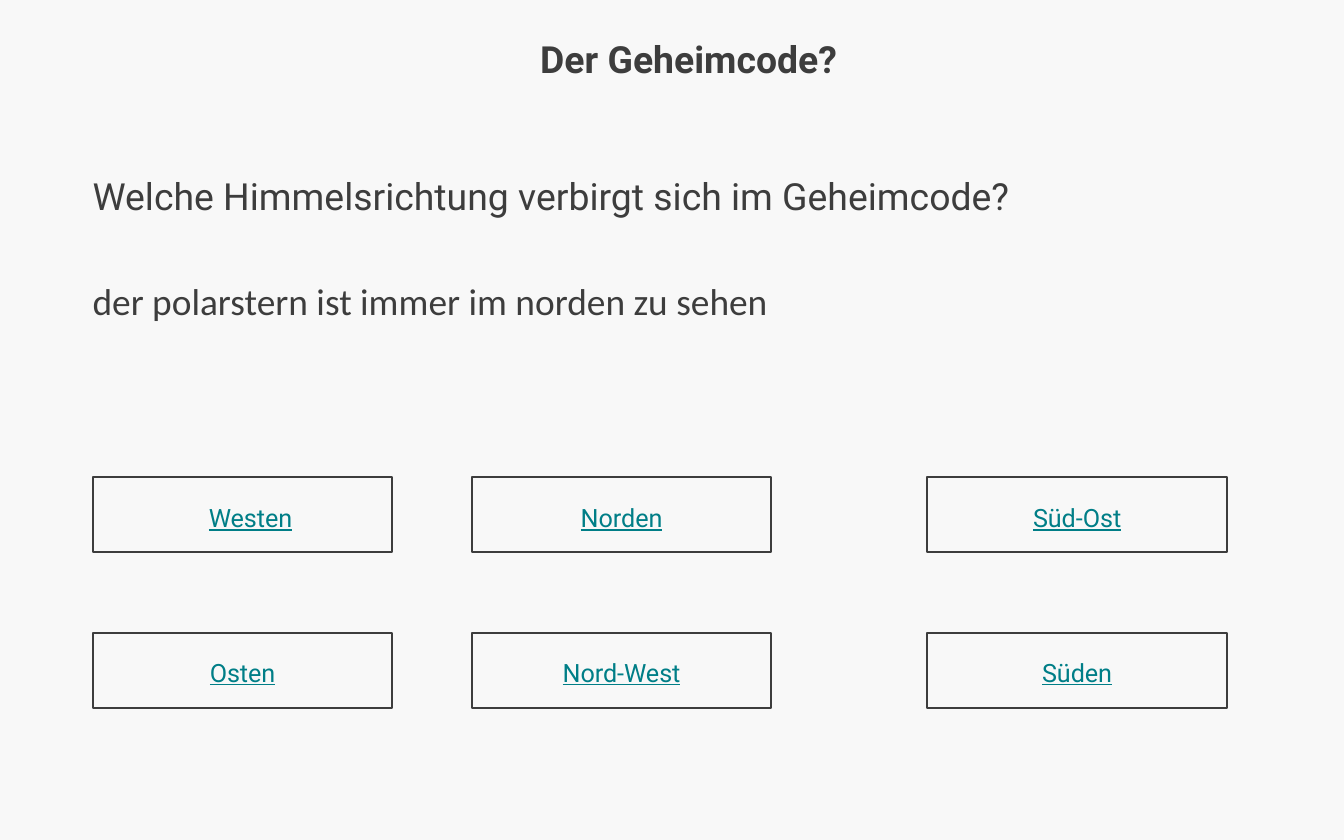
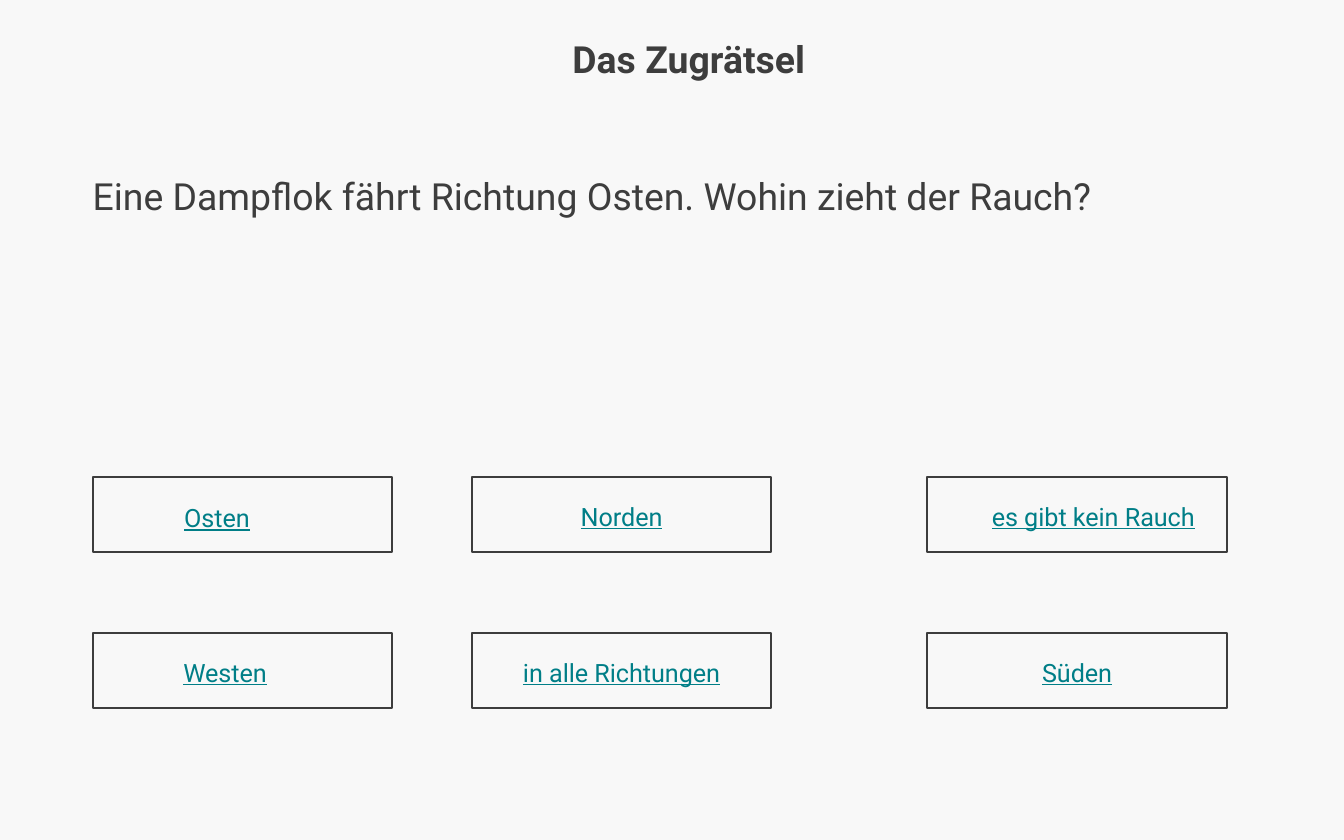
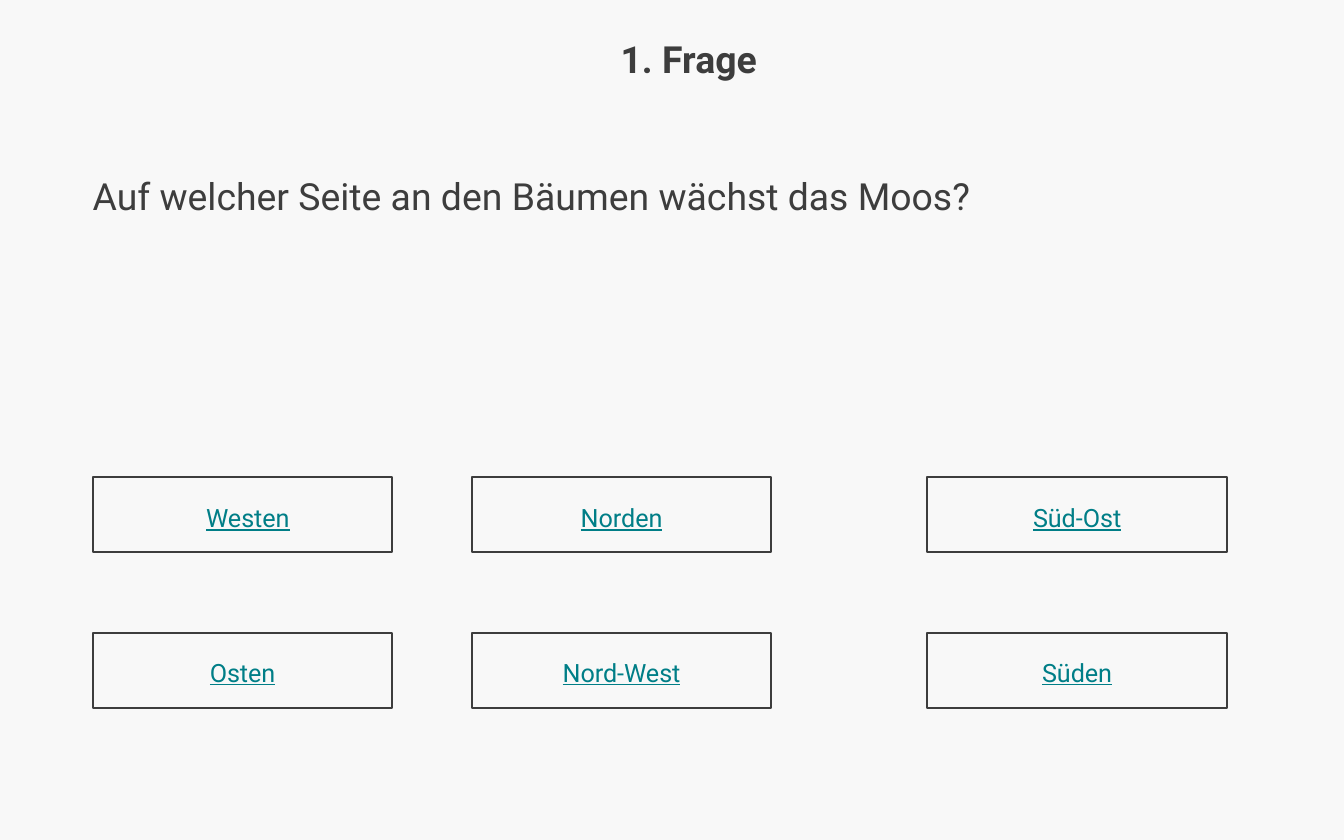
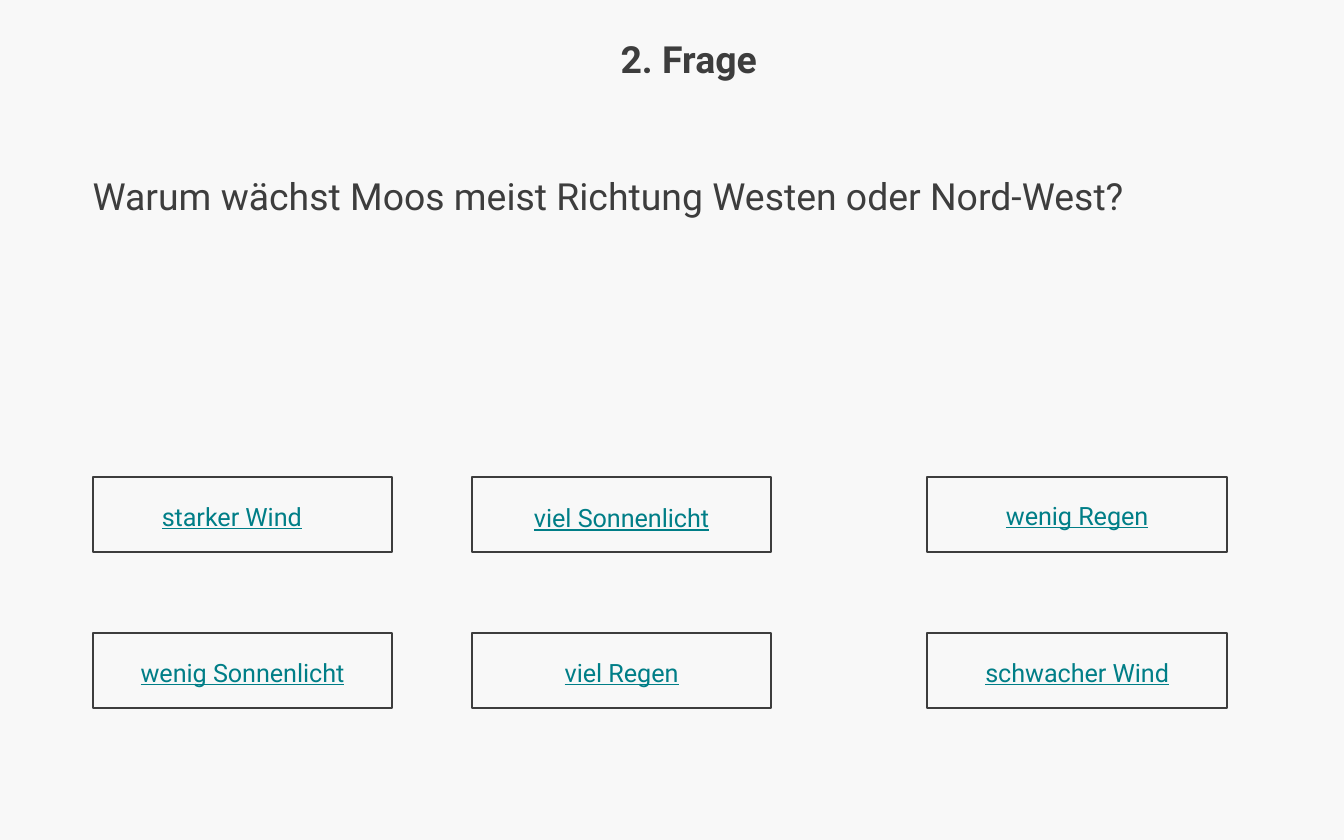
from pptx import Presentation
from pptx.dml.color import RGBColor
from pptx.enum.shapes import MSO_SHAPE
from pptx.enum.text import MSO_ANCHOR, MSO_AUTO_SIZE, PP_ALIGN
from pptx.util import Inches, Pt

COLORS = {"background": "F8F8F8", "text": "3D3D3D", "link": "007E87"}
COLUMNS = [0.69, 3.51, 6.9]
ROWS = [(3.55, 3.69), (4.71, 4.84)]  # top of the frame, top of its label
BOX_W, BOX_H = 2.23, 0.56
LABEL_W, LABEL_H = 1.77, 0.33

# Title, body lines as (text, font), answers row by row,
# and label shifts from the centre of the frame by answer.
QUESTIONS = [
    ("Der Geheimcode?",
     [("Welche Himmelsrichtung verbirgt sich im Geheimcode?", "Roboto"),
      ("der polarstern ist immer im norden zu sehen", "Calibri")],
     [["Westen", "Norden", "Süd-Ost"], ["Osten", "Nord-West", "Süden"]],
     {"Westen": (0.06, 0)}),
    ("Das Zugrätsel",
     [("Eine Dampflok fährt Richtung Osten. Wohin zieht der Rauch?", "Roboto")],
     [["Osten", "Norden", "es gibt kein Rauch"],
      ["Westen", "in alle Richtungen", "Süden"]],
     {"Osten": (-0.19, 0), "Norden": (0, -0.01),
      "es gibt kein Rauch": (0.12, -0.01), "Westen": (-0.13, 0)}),
    ("1. Frage",
     [("Auf welcher Seite an den Bäumen wächst das Moos?", "Roboto")],
     [["Westen", "Norden", "Süd-Ost"], ["Osten", "Nord-West", "Süden"]],
     {"Westen": (0.04, 0)}),
    ("2. Frage",
     [("Warum wächst Moos meist Richtung Westen oder Nord-West?", "Roboto")],
     [["starker Wind", "viel Sonnenlicht", "wenig Regen"],
      ["wenig Sonnenlicht", "viel Regen", "schwacher Wind"]],
     {"starker Wind": (-0.08, -0.01), "wenig Regen": (0, -0.02)}),
]


def add_text_frame(s, x, y, w, h):
    tf = s.shapes.add_textbox(Inches(x), Inches(y), Inches(w), Inches(h)).text_frame
    tf.word_wrap = True
    return tf


def add_run(p, text, size, color="text", font="Roboto"):
    r = p.add_run()
    r.text = text
    r.font.name = font
    r.font.size = Pt(size)
    r.font.color.rgb = RGBColor.from_string(COLORS[color])
    return r


prs = Presentation()
prs.slide_width, prs.slide_height = Inches(10), Inches(6.25)

for title, lines, answers, shifts in QUESTIONS:
    s = prs.slides.add_slide(prs.slide_layouts[6])
    s.background.fill.solid()
    s.background.fill.fore_color.rgb = RGBColor.from_string(COLORS["background"])

    tf = add_text_frame(s, 1.77, 0.05, 6.71, 0.77)
    tf.vertical_anchor = MSO_ANCHOR.MIDDLE
    p = tf.paragraphs[0]
    p.alignment = PP_ALIGN.CENTER
    add_run(p, title, 20).font.bold = True

    tf = add_text_frame(s, 0.59, 1.24, 8.82, 4.25)
    for i, (line, font) in enumerate(lines):
        p = tf.add_paragraph() if i else tf.paragraphs[0]
        if i:
            p.space_before = Pt(32)
        add_run(p, line, 20, font=font)

    for (box_top, label_top), row in zip(ROWS, answers):
        for left, answer in zip(COLUMNS, row):
            box = s.shapes.add_shape(MSO_SHAPE.RECTANGLE, Inches(left), Inches(box_top),
                                     Inches(BOX_W), Inches(BOX_H))
            box.shadow.inherit = False
            box.fill.background()
            box.line.color.rgb = RGBColor.from_string(COLORS["text"])
            box.line.width = Pt(1)

            dx, dy = shifts.get(answer, (0, 0))
            tf = add_text_frame(s, left + (BOX_W - LABEL_W) / 2 + dx, label_top + dy,
                                LABEL_W, LABEL_H)
            tf.auto_size = MSO_AUTO_SIZE.SHAPE_TO_FIT_TEXT
            p = tf.paragraphs[0]
            p.alignment = PP_ALIGN.CENTER
            add_run(p, answer, 13.5, "link").font.underline = True

prs.save("out.pptx")
